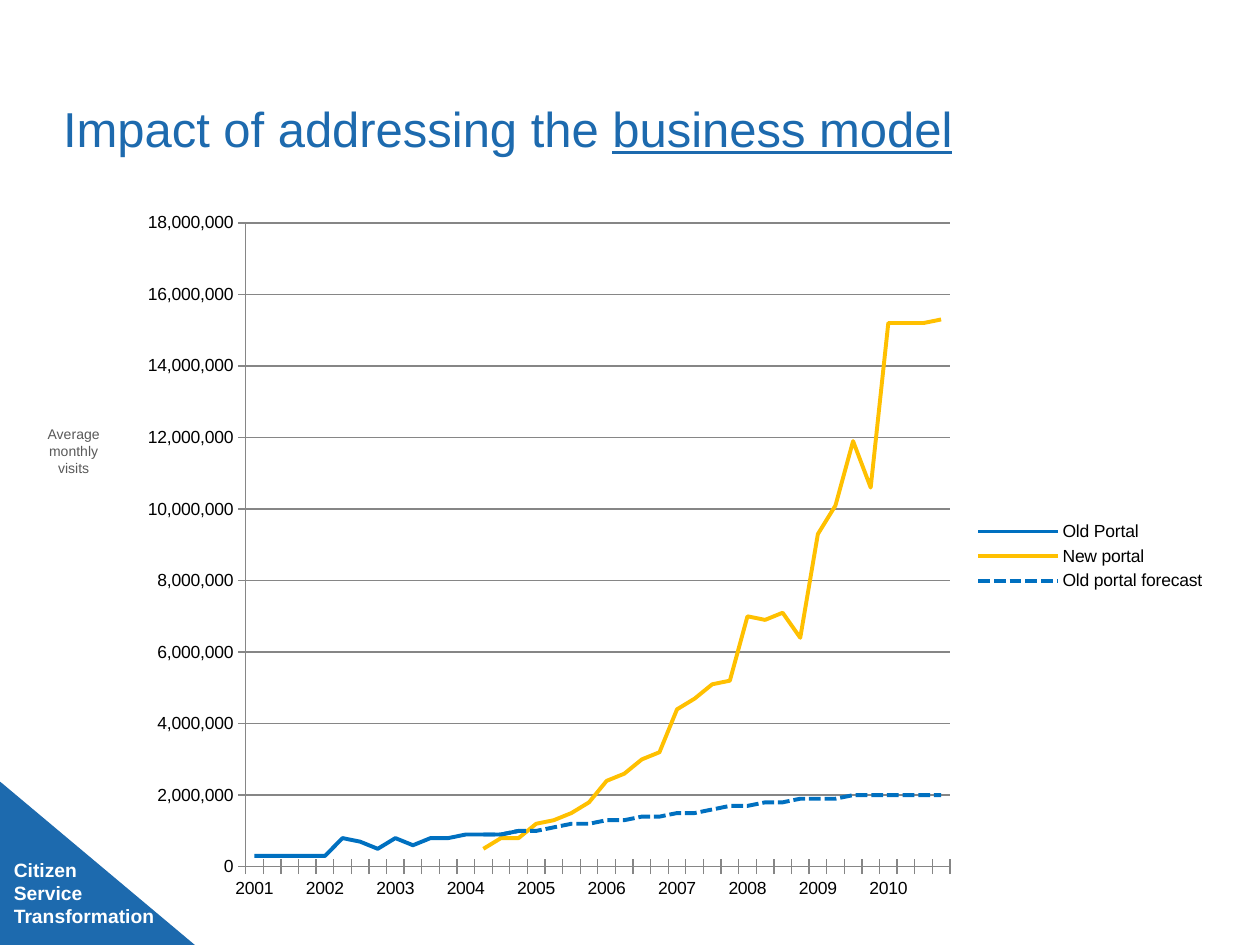
from dataclasses import dataclass

from lxml import etree
from pptx import Presentation
from pptx.chart.data import CategoryChartData
from pptx.dml.color import RGBColor
from pptx.enum.chart import XL_CHART_TYPE, XL_LEGEND_POSITION, XL_TICK_MARK
from pptx.enum.dml import MSO_LINE
from pptx.enum.shapes import MSO_SHAPE
from pptx.enum.text import MSO_ANCHOR, MSO_AUTO_SIZE, PP_ALIGN
from pptx.oxml.ns import qn
from pptx.util import Inches, Pt


@dataclass(frozen=True)
class Theme:
    font: str = "Arial"
    brand: str = "1D6AAE"
    blue: str = "0070C0"
    yellow: str = "FFC000"
    grid: str = "868686"
    label: str = "595959"
    black: str = "000000"
    white: str = "FFFFFF"
    title_size: float = 28
    tag_size: float = 11
    chart_size: float = 10
    label_size: float = 8
    series_width: float = 2.25


@dataclass(frozen=True)
class Box:
    left: float
    top: float
    width: float
    height: float

    def emu(self) -> tuple:
        return tuple(Inches(v) for v in (self.left, self.top, self.width, self.height))


@dataclass(frozen=True)
class Series:
    name: str
    start: int
    visits: tuple
    color: str
    dashed: bool = False

    def values(self, count: int) -> list:
        """Scale from hundreds of thousands and leave quarters without data empty."""
        vals = [None] * self.start + [v * 100_000 for v in self.visits]
        return vals + [None] * (count - len(vals))


THEME = Theme()
QUARTERS = [str(year) if q == 0 else "" for year in range(2001, 2011) for q in range(4)]
SERIES = (
    Series("Old Portal", 0, (3, 3, 3, 3, 3, 8, 7, 5, 8, 6, 8, 8, 9, 9, 9, 10), THEME.blue),
    Series("New portal", 13,
           (5, 8, 8, 12, 13, 15, 18, 24, 26, 30, 32, 44, 47, 51, 52, 70, 69, 71, 64,
            93, 101, 119, 106, 152, 152, 152, 153), THEME.yellow),
    Series("Old portal forecast", 13,
           (9, 9, 10, 10, 11, 12, 12, 13, 13, 14, 14, 15, 15, 16, 17, 17, 18, 18, 19,
            19, 19, 20, 20, 20, 20, 20, 20), THEME.blue, dashed=True),
)
CHART_BOX = Box(1, 1.58, 8.67, 5.67)
PLOT_BOX = Box(1.95, 1.77, 5.59, 5.11)


def rgb(color: str) -> RGBColor:
    return RGBColor.from_string(color)


def add_text(p, text: str, *, size: float, color: str, bold: bool = False,
             underline: bool = False, align=PP_ALIGN.LEFT) -> None:
    p.alignment = align
    r = p.add_run()
    r.text = text
    font = r.font
    font.name, font.size, font.color.rgb = THEME.font, Pt(size), rgb(color)
    font.bold, font.underline = bold, underline


def clear_insets(tf) -> None:
    tf.margin_left = tf.margin_right = tf.margin_top = tf.margin_bottom = 0


def add_text_box(slide, box: Box):
    tf = slide.shapes.add_textbox(*box.emu()).text_frame
    tf.word_wrap = True
    tf.auto_size = MSO_AUTO_SIZE.SHAPE_TO_FIT_TEXT
    return tf


def add_corner_tag(slide) -> None:
    sp = slide.shapes.add_shape(MSO_SHAPE.RIGHT_TRIANGLE, *Box(0, 6.21, 1.55, 1.3).emu())
    sp.shadow.inherit = False
    sp.fill.solid()
    sp.fill.fore_color.rgb = sp.line.color.rgb = rgb(THEME.brand)
    sp.line.width = Pt(0.75)
    tf = add_text_box(slide, Box(0.11, 6.81, 1.17, 0.55))
    clear_insets(tf)
    for i, text in enumerate(("Citizen", "Service Transformation")):
        p = tf.add_paragraph() if i else tf.paragraphs[0]
        add_text(p, text, size=THEME.tag_size, color=THEME.white, bold=True)


def fill_title(slide) -> None:
    title = slide.shapes.title
    title.left, title.top, title.width, title.height = Box(0.5, 0, 9, 1.25).emu()
    tf = title.text_frame
    clear_insets(tf)
    tf.word_wrap = True
    tf.auto_size = MSO_AUTO_SIZE.NONE
    tf.vertical_anchor = MSO_ANCHOR.BOTTOM
    p = tf.paragraphs[0]
    p.line_spacing = 0.85
    for text, underline in (("Impact of addressing the ", False), ("business model", True)):
        add_text(p, text, size=THEME.title_size, color=THEME.brand, underline=underline)


def set_plot_layout(chart, box: Box, frame: Box) -> None:
    """Fix the inner plot area as fractions of the chart frame."""
    plot_area = chart._chartSpace.chart.plotArea
    layout = plot_area.find(qn("c:layout"))
    if layout is None:
        layout = etree.Element(qn("c:layout"))
        plot_area.insert(0, layout)
    manual = etree.SubElement(layout, qn("c:manualLayout"))
    settings = {
        "layoutTarget": "inner", "xMode": "edge", "yMode": "edge",
        "x": (box.left - frame.left) / frame.width,
        "y": (box.top - frame.top) / frame.height,
        "w": box.width / frame.width,
        "h": box.height / frame.height,
    }
    for tag, value in settings.items():
        etree.SubElement(manual, qn(f"c:{tag}")).set("val", str(value))


def format_axes(chart) -> None:
    for axis in (chart.category_axis, chart.value_axis):
        axis.major_tick_mark = XL_TICK_MARK.CROSS
        axis.minor_tick_mark = XL_TICK_MARK.NONE
        axis.format.line.color.rgb = rgb(THEME.grid)
        axis.format.line.width = Pt(0.75)
    chart.category_axis.has_major_gridlines = False
    axis = chart.value_axis
    axis.minimum_scale, axis.maximum_scale, axis.major_unit = 0, 18_000_000, 2_000_000
    axis.tick_labels.number_format = "#,##0"
    axis.tick_labels.number_format_is_linked = False
    axis.has_major_gridlines = True
    axis.major_gridlines.format.line.color.rgb = rgb(THEME.grid)
    axis.major_gridlines.format.line.width = Pt(0.75)


def add_visits_chart(slide) -> None:
    data = CategoryChartData(number_format="#,##0")
    data.categories = QUARTERS
    for s in SERIES:
        data.add_series(s.name, s.values(len(QUARTERS)))
    chart = slide.shapes.add_chart(XL_CHART_TYPE.LINE, *CHART_BOX.emu(), data).chart
    chart.has_title = False
    chart.font.name, chart.font.size = THEME.font, Pt(THEME.chart_size)
    chart.font.color.rgb = rgb(THEME.black)
    chart.has_legend = True
    chart.legend.position = XL_LEGEND_POSITION.RIGHT
    chart.legend.include_in_layout = False
    plot = chart.plots[0]
    plot.vary_by_categories = False
    for s, line_series in zip(SERIES, plot.series):
        line_series.smooth = False
        line = line_series.format.line
        line.color.rgb = rgb(s.color)
        line.width = Pt(THEME.series_width)
        if s.dashed:
            line.dash_style = MSO_LINE.SQUARE_DOT
    format_axes(chart)
    set_plot_layout(chart, PLOT_BOX, CHART_BOX)


def main() -> None:
    prs = Presentation()
    prs.slide_width, prs.slide_height = Inches(10), Inches(7.5)
    slide = prs.slides.add_slide(prs.slide_layouts[5])
    add_corner_tag(slide)
    fill_title(slide)
    add_visits_chart(slide)
    tf = add_text_box(slide, Box(0.17, 3.33, 0.83, 0.5))
    add_text(tf.paragraphs[0], "Average monthly visits", size=THEME.label_size,
             color=THEME.label, align=PP_ALIGN.CENTER)
    prs.save("out.pptx")


if __name__ == "__main__":
    main()
